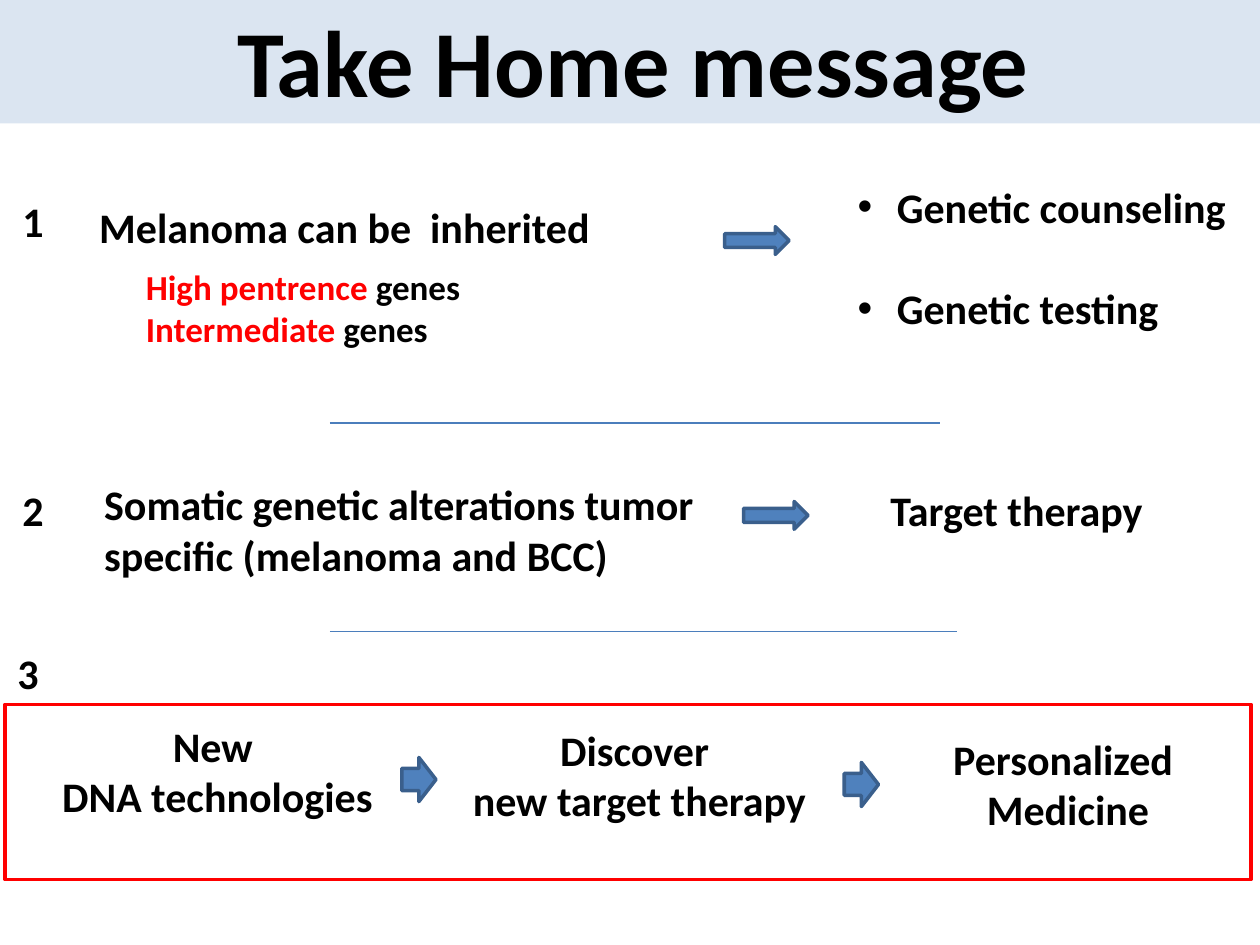
import pptx
import pptx.util
import pptx.dml.color
import pptx.enum.shapes
import pptx.enum.text
import pptx.oxml
import pptx.oxml.ns

Cm, Pt = pptx.util.Cm, pptx.util.Pt
RGBColor = pptx.dml.color.RGBColor
KIND = pptx.enum.shapes.MSO_SHAPE
ALIGN = pptx.enum.text.PP_ALIGN
NS = pptx.oxml.ns.nsdecls("a")

BLACK = RGBColor(0x00, 0x00, 0x00)
RED = RGBColor(0xFF, 0x00, 0x00)
BLUE = RGBColor(0x4F, 0x81, 0xBD)
EDGE = RGBColor(0x3A, 0x5F, 0x8C)
RULE = RGBColor(0x4B, 0x7E, 0xBC)

deck = pptx.Presentation()
deck.slide_width, deck.slide_height = Cm(25.4), Cm(19.05)
slide = deck.slides.add_slide(deck.slide_layouts[6])
shapes = slide.shapes


def write(frame, paras, size=24, align=ALIGN.LEFT):
    """Fill a text frame; each paragraph is a list of (text, colour) runs."""
    frame.word_wrap = True
    for i, runs in enumerate(paras):
        para = frame.add_paragraph() if i else frame.paragraphs[0]
        para.alignment = align
        for text, color in runs:
            run = para.add_run()
            run.text = text
            style = {"name": "Calibri", "size": Pt(size), "bold": True}
            for key, value in style.items():
                setattr(run.font, key, value)
            run.font.color.rgb = color


def draw(kind, place, fill=None, line=None):
    shape = shapes.add_shape(kind, *map(Cm, place))
    shape.shadow.inherit = False
    if fill is None:
        shape.fill.background()
    else:
        shape.fill.solid()
        shape.fill.fore_color.rgb = fill
    if line is None:
        shape.line.fill.background()
    else:
        shape.line.color.rgb = line
        shape.line.width = Pt(2)
    return shape


# Title band, a light tint of the blue
band = draw(KIND.RECTANGLE, (0, -0.08, 25.53, 2.57), BLUE)
tint = band.fill.fore_color._xFill.find(pptx.oxml.ns.qn("a:srgbClr"))
tint.append(pptx.oxml.parse_xml(f'<a:alpha {NS} val="20000"/>'))
write(band.text_frame, [[("Take Home message", BLACK)]], 54, ALIGN.CENTER)

# Frame around the third message
draw(KIND.RECTANGLE, (0.1, 14.2, 25.12, 3.53), line=RED)

# Plain black texts: place, alignment, lines
texts = [
    ((0.2, 3.81, 1.8, 1.27), ALIGN.LEFT, ["1"]),
    ((0.2, 9.65, 1.8, 1.27), ALIGN.LEFT, ["2"]),
    ((0.1, 12.93, 1.8, 1.27), ALIGN.LEFT, ["3"]),
    ((1.75, 3.94, 11.68, 1.27), ALIGN.LEFT, ["Melanoma can be  inherited"]),
    ((1.85, 9.53, 14.5, 2.31), ALIGN.LEFT,
     ["Somatic genetic alterations tumor specific (melanoma and BCC)"]),
    ((17.7, 9.65, 9.45, 1.27), ALIGN.LEFT, ["Target therapy"]),
    ((0.51, 14.4, 7.75, 2.31), ALIGN.CENTER, ["New ", "DNA technologies"]),
    ((8.1, 14.48, 9.58, 2.31), ALIGN.CENTER,
     ["Discover ", "new target therapy"]),
    ((16.74, 14.66, 9.58, 2.31), ALIGN.CENTER, ["Personalized ", "Medicine"]),
]
for place, align, lines in texts:
    box = shapes.add_textbox(*map(Cm, place))
    write(box.text_frame, [[(text, BLACK)] for text in lines], align=align)

# Gene groups
genes = shapes.add_textbox(Cm(2.69), Cm(5.23), Cm(15.88), Cm(1.96))
groups = ["High pentrence ", "Intermediate "]
write(genes.text_frame,
      [[(group, RED), ("genes", BLACK)] for group in groups], 20)

# Bulleted services
care = shapes.add_textbox(Cm(17.04), Cm(3.53), Cm(8.66), Cm(3.33))
write(care.text_frame,
      [[("Genetic counseling", BLACK)], [("Genetic testing", BLACK)]])
for i, para in enumerate(care.text_frame.paragraphs):
    if i:
        para.space_before = Pt(29)
    props = para._p.get_or_add_pPr()
    props.set("marL", str(Cm(0.79)))
    props.set("indent", str(-Cm(0.79)))
    for bullet in ('buFont {} typeface="Arial"', 'buChar {} char="•"'):
        props.append(pptx.oxml.parse_xml(f"<a:{bullet.format(NS)}/>"))

# Rules between messages
for right, y in [(18.95, 8.53), (19.3, 12.73)]:
    rule = shapes.add_connector(pptx.enum.shapes.MSO_CONNECTOR.STRAIGHT,
                                Cm(6.65), Cm(y), Cm(right), Cm(y))
    rule.line.color.rgb = RULE
    rule.line.width = Pt(0.75)
    rule._element.spPr.append(pptx.oxml.parse_xml(f"<a:effectLst {NS}/>"))

# Arrows: long ones above, short ones inside the frame
LONG, SHORT = (1.3, 0.56), (0.69, 0.89)
arrows = [(14.61, 4.57, LONG), (14.99, 10.11, LONG),
          (8.1, 15.27, SHORT), (17.02, 15.37, SHORT)]
for x, y, size in arrows:
    draw(KIND.RIGHT_ARROW, (x, y, *size), BLUE, EDGE)

deck.save("out.pptx")
